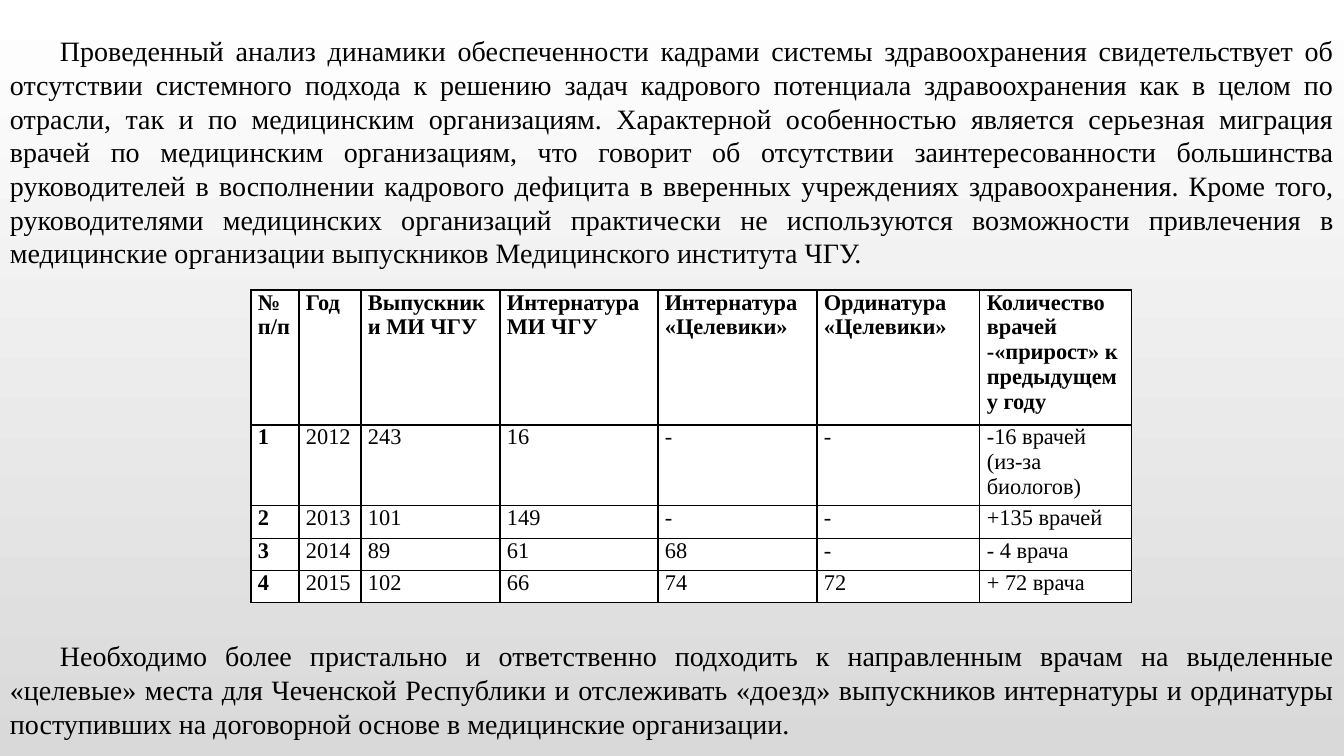
"""Build the slide on medical staffing and graduate intake by year."""
from lxml.etree import fromstring
from pptx import Presentation
from pptx.dml.color import RGBColor
from pptx.enum.text import PP_ALIGN
from pptx.util import Emu, Pt

BLACK = RGBColor(0x00, 0x00, 0x00)
WHITE = RGBColor(0xFF, 0xFF, 0xFF)
GREY = RGBColor(0xD9, 0xD9, 0xD9)
FONT = "Times New Roman"
DRAWING = "http://schemas.openxmlformats.org/drawingml/2006/main"


def px(length):
    return Emu(round(length * 914400 / 100.8))


def style(paragraph, size, bold=False):
    paragraph.font.name = FONT
    paragraph.font.size = Pt(size)
    paragraph.font.bold = bold
    paragraph.font.color.rgb = BLACK


deck = Presentation()
deck.slide_width, deck.slide_height = px(1344), px(756)
slide = deck.slides.add_slide(deck.slide_layouts[6])

backdrop = slide.background.fill
backdrop.gradient()
backdrop.gradient_angle = 90
for stop, color in zip(backdrop.gradient_stops, (GREY, WHITE)):
    stop.color.rgb = color
backdrop.gradient_stops[0].position = 0
backdrop.gradient_stops[1].position = 1

ANALYSIS = (
    "Проведенный анализ динамики обеспеченности кадрами системы здравоохранения "
    "свидетельствует об отсутствии системного подхода к решению задач кадрового "
    "потенциала здравоохранения как в целом по отрасли, так и по медицинским "
    "организациям. Характерной особенностью является серьезная миграция врачей по "
    "медицинским организациям, что говорит об отсутствии заинтересованности "
    "большинства руководителей в восполнении кадрового дефицита в вверенных "
    "учреждениях здравоохранения. Кроме того, руководителями медицинских организаций "
    "практически не используются возможности привлечения в медицинские организации "
    "выпускников Медицинского института ЧГУ."
)
CONCLUSION = (
    "Необходимо более пристально и ответственно подходить к направленным врачам на "
    "выделенные «целевые» места для Чеченской Республики и отслеживать «доезд» "
    "выпускников интернатуры и ординатуры поступивших на договорной основе в "
    "медицинские организации."
)
narrative = slide.shapes.add_textbox(px(0), px(29), px(1344), px(715)).text_frame
narrative.word_wrap = True
narrative.text = f"{ANALYSIS}\n{CONCLUSION}"
for paragraph in narrative.paragraphs:
    paragraph.alignment = PP_ALIGN.JUSTIFY
    paragraph._p.get_or_add_pPr().set("indent", str(px(50)))
    style(paragraph, 20)
narrative.paragraphs[1].space_before = Pt(264)

INTAKE = [
    ("№ п/п", "Год", "Выпускники МИ ЧГУ", "Интернатура\nМИ ЧГУ",
     "Интернатура\n«Целевики»", "Ординатура\n«Целевики»",
     "Количество врачей -«прирост» к предыдущему году"),
    ("1", "2012", "243", "16", "-", "-", "-16 врачей (из-за биологов)"),
    ("2", "2013", "101", "149", "-", "-", "+135 врачей"),
    ("3", "2014", "89", "61", "68", "-", "- 4 врача"),
    ("4", "2015", "102", "66", "74", "72", "+ 72 врача"),
]
COLUMN_WIDTHS = (48, 62, 139, 158, 159, 163, 152)
ROW_HEIGHTS = (135, 80, 33, 32, 32)
intake = slide.shapes.add_table(
    len(ROW_HEIGHTS), len(COLUMN_WIDTHS), px(251), px(290),
    px(sum(COLUMN_WIDTHS)), px(sum(ROW_HEIGHTS))).table
intake.first_row = intake.horz_banding = False
for column, width in zip(intake.columns, COLUMN_WIDTHS):
    column.width = px(width)

for r, (row, height, entries) in enumerate(zip(intake.rows, ROW_HEIGHTS, INTAKE)):
    row.height = px(height)
    for c, (cell, entry) in enumerate(zip(row.cells, entries)):
        cell.text = entry
        cell.margin_left = cell.margin_right = px(7)
        cell.margin_top = cell.margin_bottom = 0
        cell.fill.solid()
        cell.fill.fore_color.rgb = WHITE
        for paragraph in cell.text_frame.paragraphs:
            style(paragraph, 16, bold=r == 0 or c == 0)
        for position, side in enumerate(("lnL", "lnR", "lnT", "lnB")):
            border = fromstring(
                f'<a:{side} xmlns:a="{DRAWING}" w="{Pt(1)}"><a:solidFill>'
                f'<a:srgbClr val="{BLACK}"/></a:solidFill></a:{side}>')
            cell._tc.get_or_add_tcPr().insert(position, border)

deck.save("out.pptx")
